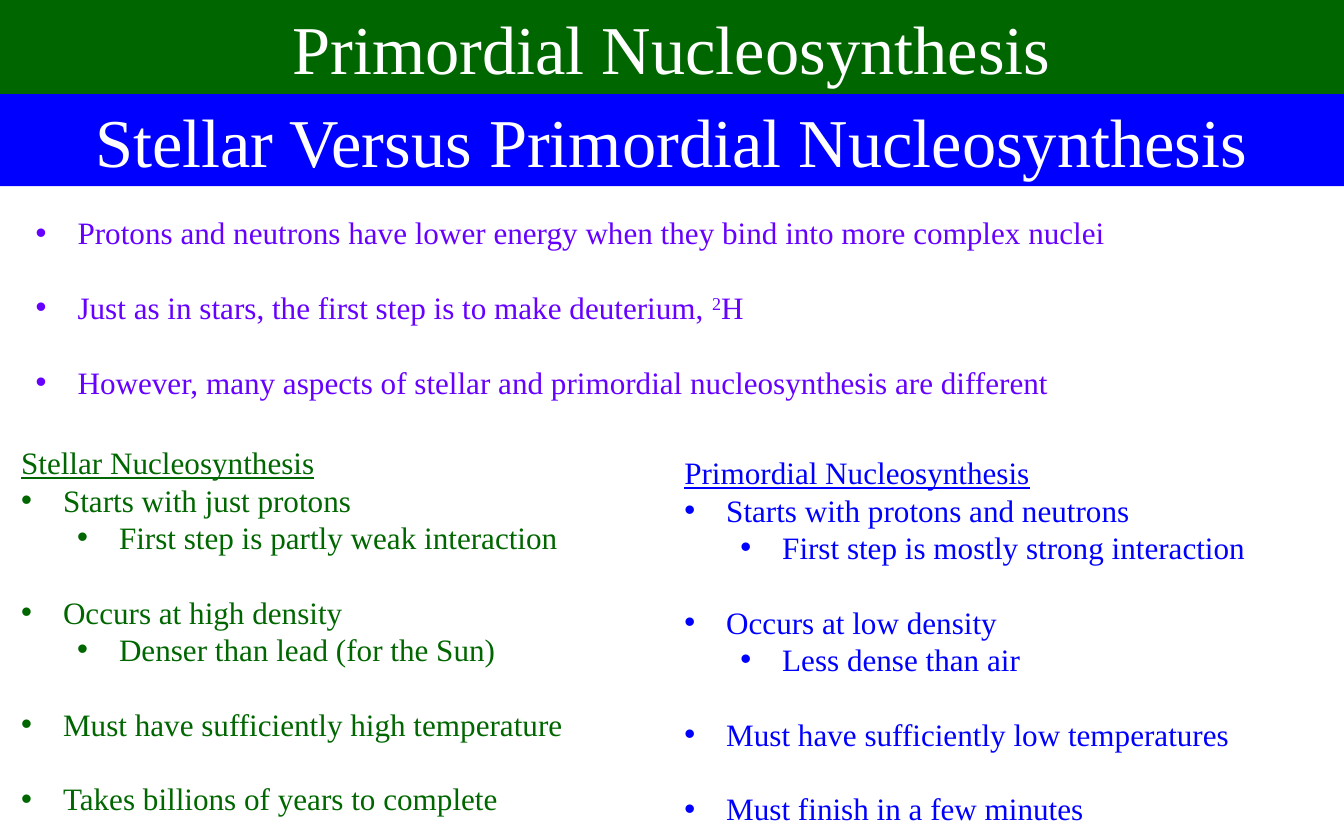
from lxml.etree import SubElement
from pptx import Presentation
from pptx.dml.color import RGBColor
from pptx.enum.shapes import MSO_SHAPE as Shape
from pptx.enum.text import MSO_ANCHOR as Anchor, MSO_AUTO_SIZE as AutoSize, PP_ALIGN as Align
from pptx.oxml.ns import qn
from pptx.util import Cm, Pt

FONT = "Times New Roman"
GREEN, BLUE, PURPLE, WHITE = "006600", "0000FF", "6600FF", "FFFFFF"
WIDTH, HEIGHT = 30.48, 19.05
LINE_RATIO = 1.2
BODY_SIZE, TITLE_SIZE = 20, 44
HANG = 0.95

COURSE_TOPIC = "Primordial Nucleosynthesis"
SLIDE_TITLE = "Stellar Versus Primordial Nucleosynthesis"
HEADING, POINT, DETAIL = "heading", "point", "detail"

INTRO = [
    (POINT, "Protons and neutrons have lower energy when they bind into more complex nuclei"),
    (POINT, "Just as in stars, the first step is to make deuterium, ^2^H"),
    (POINT, "However, many aspects of stellar and primordial nucleosynthesis are different"),
]
STELLAR = [
    (HEADING, "Stellar Nucleosynthesis"),
    (POINT, "Starts with just protons"),
    (DETAIL, "First step is partly weak interaction"),
    (POINT, "Occurs at high density"),
    (DETAIL, "Denser than lead (for the Sun)"),
    (POINT, "Must have sufficiently high temperature"),
    (POINT, "Takes billions of years to complete"),
]
PRIMORDIAL = [
    (HEADING, "Primordial Nucleosynthesis"),
    (POINT, "Starts with protons and neutrons"),
    (DETAIL, "First step is mostly strong interaction"),
    (POINT, "Occurs at low density"),
    (DETAIL, "Less dense than air"),
    (POINT, "Must have sufficiently low temperatures"),
    (POINT, "Must finish in a few minutes"),
]
BLOCKS = [
    (INTRO, PURPLE, (0.56, 4.72, 29.39, 4.52)),
    (STELLAR, GREEN, (0.23, 9.93, 15.04, 8.81)),
    (PRIMORDIAL, BLUE, (15.27, 10.16, 14.66, 8.81)),
]


def color(hex_value):
    return RGBColor.from_string(hex_value)


def style_run(run, size, hex_value):
    run.font.name = FONT
    run.font.size = Pt(size)
    run.font.color.rgb = color(hex_value)


def set_margins(frame):
    frame.margin_left = frame.margin_right = Cm(0.25)
    frame.margin_top = frame.margin_bottom = Cm(0.13)
    frame.vertical_anchor = Anchor.TOP
    frame.word_wrap = True
    frame.auto_size = AutoSize.NONE


def format_banner(banner, text, top, height, fill):
    banner.left, banner.top = Cm(0), Cm(top)
    banner.width, banner.height = Cm(WIDTH), Cm(height)
    banner.fill.solid()
    banner.fill.fore_color.rgb = color(fill)
    banner.line.fill.background()
    frame = banner.text_frame
    set_margins(frame)
    frame.text = text
    line = frame.paragraphs[0]
    line.alignment = Align.CENTER
    line.line_spacing = Pt(TITLE_SIZE * LINE_RATIO)
    style_run(line.runs[0], TITLE_SIZE, WHITE)


def add_bullet(paragraph, indent):
    props = paragraph._p.get_or_add_pPr()
    props.set("marL", str(Cm(indent)))
    props.set("indent", str(-Cm(HANG)))
    SubElement(props, qn("a:buFont"), typeface="Arial")
    SubElement(props, qn("a:buChar"), char="•")


def add_block(slide, lines, hex_value, box):
    frame = slide.shapes.add_textbox(*map(Cm, box)).text_frame
    set_margins(frame)
    previous = None
    for kind, text in lines:
        paragraph = frame.add_paragraph() if previous else frame.paragraphs[0]
        paragraph.alignment = Align.LEFT
        paragraph.line_spacing = Pt(BODY_SIZE * LINE_RATIO)
        if kind == POINT and previous in (POINT, DETAIL):
            paragraph.space_before = Pt(BODY_SIZE * LINE_RATIO)
        if kind == DETAIL:
            paragraph.level = 1
        if kind != HEADING:
            add_bullet(paragraph, HANG + (1.27 if kind == DETAIL else 0))
        for index, part in enumerate(text.split("^")):
            run = paragraph.add_run()
            run.text = part
            style_run(run, BODY_SIZE, hex_value)
            if kind == HEADING:
                run.font.underline = True
            if index % 2:
                run.font._element.set("baseline", "30000")
        previous = kind


def main():
    deck = Presentation()
    deck.slide_width, deck.slide_height = Cm(WIDTH), Cm(HEIGHT)
    slide = deck.slides.add_slide(deck.slide_layouts[5])
    format_banner(slide.shapes.title, SLIDE_TITLE, 2.11, 2.11, BLUE)
    topic = slide.shapes.add_shape(Shape.RECTANGLE, 0, 0, 0, 0)
    topic.shadow.inherit = False
    format_banner(topic, COURSE_TOPIC, 0, 2.13, GREEN)
    for lines, hex_value, box in BLOCKS:
        add_block(slide, lines, hex_value, box)
    deck.save("out.pptx")


if __name__ == "__main__":
    main()
